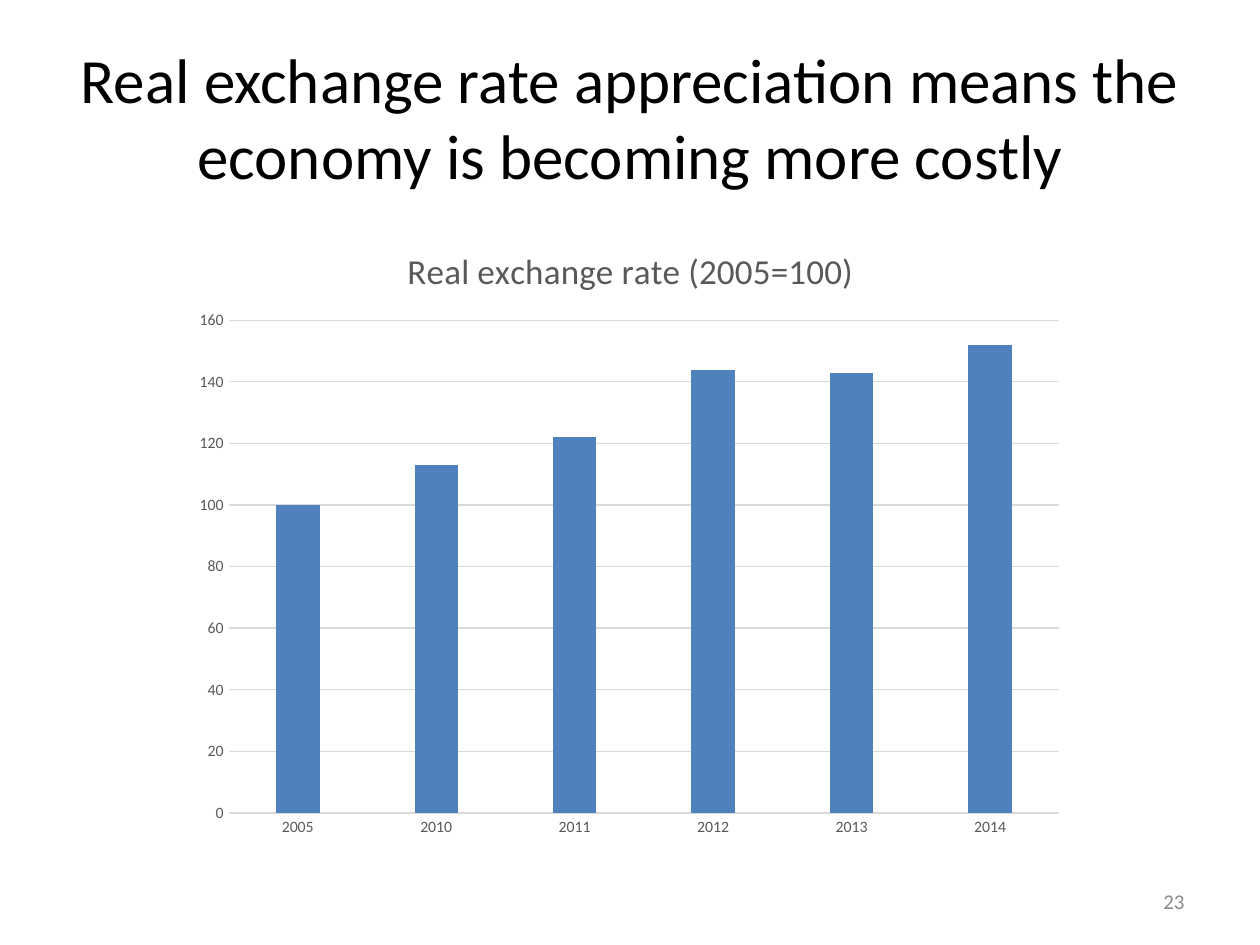
from lxml.etree import SubElement
from pptx import Presentation
from pptx.chart.data import CategoryChartData
from pptx.dml.color import RGBColor
from pptx.enum.chart import XL_CHART_TYPE, XL_TICK_MARK
from pptx.enum.text import MSO_ANCHOR, PP_ALIGN
from pptx.oxml.ns import qn
from pptx.util import Inches, Pt

# Content
TITLE = "Real exchange rate appreciation means the economy is becoming more costly"
PAGE_NUMBER = "23"
CHART_TITLE = "Real exchange rate (2005=100)"
RATES = {"2005": 100, "2010": 113, "2011": 122, "2012": 144, "2013": 143, "2014": 152}
PLOT_AREA = {"x": 0.05, "y": 0.16, "w": 0.93, "h": 0.79}  # shares of the chart

FONT = "Calibri"
COLORS = {"title": "000000", "number": "8C8C8C", "label": "595959",
          "grid": "D9D9D9", "bar": "4F81BD"}


def color(name):
    return RGBColor.from_string(COLORS[name])


def style_font(font, size, color_name):
    font.name = FONT
    font.size = Pt(size)
    font.bold = False
    font.color.rgb = color(color_name)


def place(shape, left, top, width, height):
    shape.left, shape.top = Inches(left), Inches(top)
    shape.width, shape.height = Inches(width), Inches(height)


def write(shape, text, size, color_name, alignment):
    frame = shape.text_frame
    frame.word_wrap = True
    frame.vertical_anchor = MSO_ANCHOR.MIDDLE
    paragraph = frame.paragraphs[0]
    paragraph.alignment = alignment
    run = paragraph.add_run()
    run.text = text
    style_font(run.font, size, color_name)


def style_line(line, color_name):
    line.color.rgb = color(color_name)
    line.width = Pt(0.75)


def set_plot_area(chart):
    plot_area = chart._chartSpace.chart.plotArea
    layout = plot_area.find(qn("c:layout"))
    if layout is None:
        layout = SubElement(plot_area, qn("c:layout"))
        plot_area.insert(0, layout)
    manual = SubElement(layout, qn("c:manualLayout"))
    settings = {"layoutTarget": "inner", "xMode": "edge", "yMode": "edge", **PLOT_AREA}
    for name, value in settings.items():
        SubElement(manual, qn(f"c:{name}")).set("val", str(value))


presentation = Presentation()
presentation.slide_width, presentation.slide_height = Inches(10), Inches(7.5)
slide = presentation.slides.add_slide(presentation.slide_layouts[5])

# Title
title = slide.shapes.title
place(title, 0.5, 0.3, 9, 1.25)
write(title, TITLE, 36, "title", PP_ALIGN.CENTER)

# Page number
number = slide.shapes.add_textbox(Inches(7.17), Inches(6.95), Inches(2.33), Inches(0.4))
write(number, PAGE_NUMBER, 12, "number", PP_ALIGN.RIGHT)

# Column chart
data = CategoryChartData()
data.categories = list(RATES)
data.add_series("Series 1", list(RATES.values()))
chart = slide.shapes.add_chart(
    XL_CHART_TYPE.COLUMN_CLUSTERED,
    Inches(1.46), Inches(1.75), Inches(7.09), Inches(4.95), data).chart
style_font(chart.font, 10, "title")
chart.has_legend = False
set_plot_area(chart)

chart.has_title = True
chart.chart_title.include_in_layout = False
title_run = chart.chart_title.text_frame.paragraphs[0].add_run()
title_run.text = CHART_TITLE
style_font(title_run.font, 20, "label")

plot = chart.plots[0]
plot.vary_by_categories = False
plot.gap_width = 219
plot.overlap = -27
bars = plot.series[0].format
bars.fill.solid()
bars.fill.fore_color.rgb = color("bar")

# Axes
for axis in (chart.category_axis, chart.value_axis):
    axis.major_tick_mark = axis.minor_tick_mark = XL_TICK_MARK.NONE
    style_font(axis.tick_labels.font, 9, "label")
style_line(chart.category_axis.format.line, "grid")
value_axis = chart.value_axis
value_axis.minimum_scale, value_axis.maximum_scale = 0, 160
value_axis.major_unit = 20
value_axis.format.line.fill.background()
value_axis.has_major_gridlines = True
style_line(value_axis.major_gridlines.format.line, "grid")

presentation.save("out.pptx")
